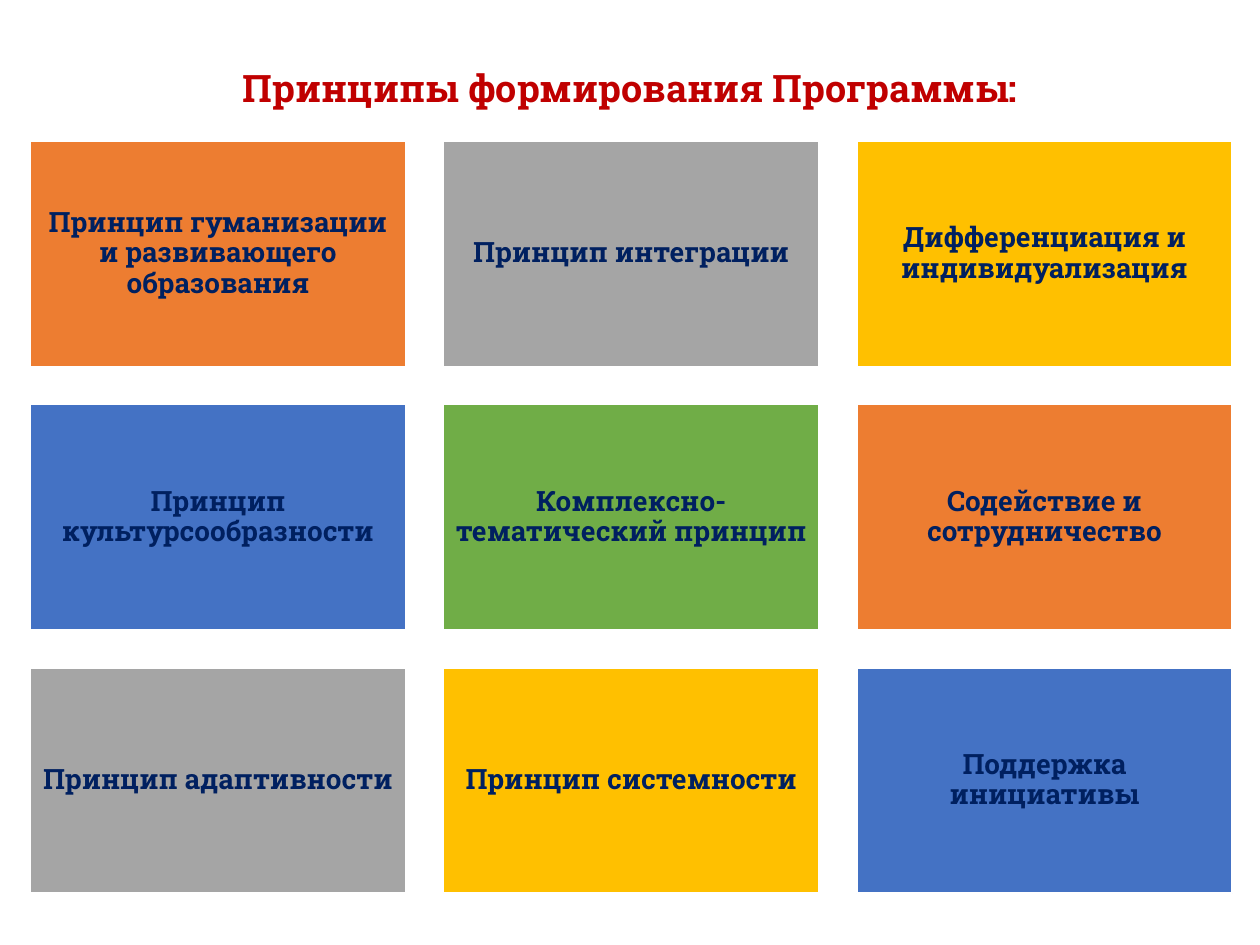
from dataclasses import dataclass

from pptx import Presentation
from pptx.dml.color import RGBColor as RGB
from pptx.enum.shapes import MSO_SHAPE as SHAPE
from pptx.enum.text import MSO_ANCHOR as ANCHOR, PP_ALIGN as ALIGN
from pptx.util import Inches, Pt


@dataclass(frozen=True)
class Theme:
    font: str = "Roboto Slab"
    title_size: float = 21.6
    card_size: float = 16
    title: str = "C00000"
    text: str = "002060"
    border: str = "FFFFFF"
    orange: str = "ED7D31"
    gray: str = "A5A5A5"
    yellow: str = "FFC000"
    blue: str = "4472C4"
    green: str = "70AD47"


def write(tf, text, *, font, size, color, align=ALIGN.LEFT, margin=None):
    tf.word_wrap = True
    tf.vertical_anchor = ANCHOR.MIDDLE
    if margin is not None:
        tf.margin_left = tf.margin_right = margin
        tf.margin_top = tf.margin_bottom = margin
    p = tf.paragraphs[0]
    p.alignment = align
    p.line_spacing = 0.9
    r = p.add_run()
    r.text = text
    r.font.name = font
    r.font.size = Pt(size)
    r.font.bold = True
    r.font.color.rgb = RGB.from_string(color)


class SlideBuilder:
    def __init__(self, slide, theme):
        self.s = slide
        self.theme = theme

    def title(self, text, x, y, w, h):
        t = self.theme
        sp = self.s.shapes.add_textbox(Inches(x), Inches(y), Inches(w), Inches(h))
        write(sp.text_frame, text, font=t.font, size=t.title_size, color=t.title)

    def card(self, text, fill, x, y, w, h):
        t = self.theme
        sp = self.s.shapes.add_shape(
            SHAPE.RECTANGLE, Inches(x), Inches(y), Inches(w), Inches(h))
        sp.shadow.inherit = False
        sp.fill.solid()
        sp.fill.fore_color.rgb = RGB.from_string(fill)
        sp.line.color.rgb = RGB.from_string(t.border)
        sp.line.width = Pt(1)
        write(sp.text_frame, text, font=t.font, size=t.card_size, color=t.text,
              align=ALIGN.CENTER, margin=Inches(0.07))

    def card_grid(self, cards, x, y, w, h, gap, columns):
        for i, (text, fill) in enumerate(cards):
            row, col = divmod(i, columns)
            self.card(text, fill, x + col * (w + gap), y + row * (h + gap), w, h)


def main():
    prs = Presentation()
    prs.slide_width, prs.slide_height = Inches(10), Inches(7.5)
    theme = Theme()
    builder = SlideBuilder(prs.slides.add_slide(prs.slide_layouts[6]), theme)
    principles = [
        ("Принцип гуманизации и развивающего образования", theme.orange),
        ("Принцип интеграции", theme.gray),
        ("Дифференциация и индивидуализация", theme.yellow),
        ("Принцип культурсообразности", theme.blue),
        ("Комплексно-тематический принцип", theme.green),
        ("Содействие и сотрудничество", theme.orange),
        ("Принцип адаптивности", theme.gray),
        ("Принцип системности", theme.yellow),
        ("Поддержка инициативы", theme.blue),
    ]
    builder.title("Принципы формирования Программы:", 1.83, 0.4, 7.23, 0.63)
    builder.card_grid(principles, x=0.24, y=1.12, w=2.98, h=1.79, gap=0.3, columns=3)
    prs.save("out.pptx")


if __name__ == "__main__":
    main()
